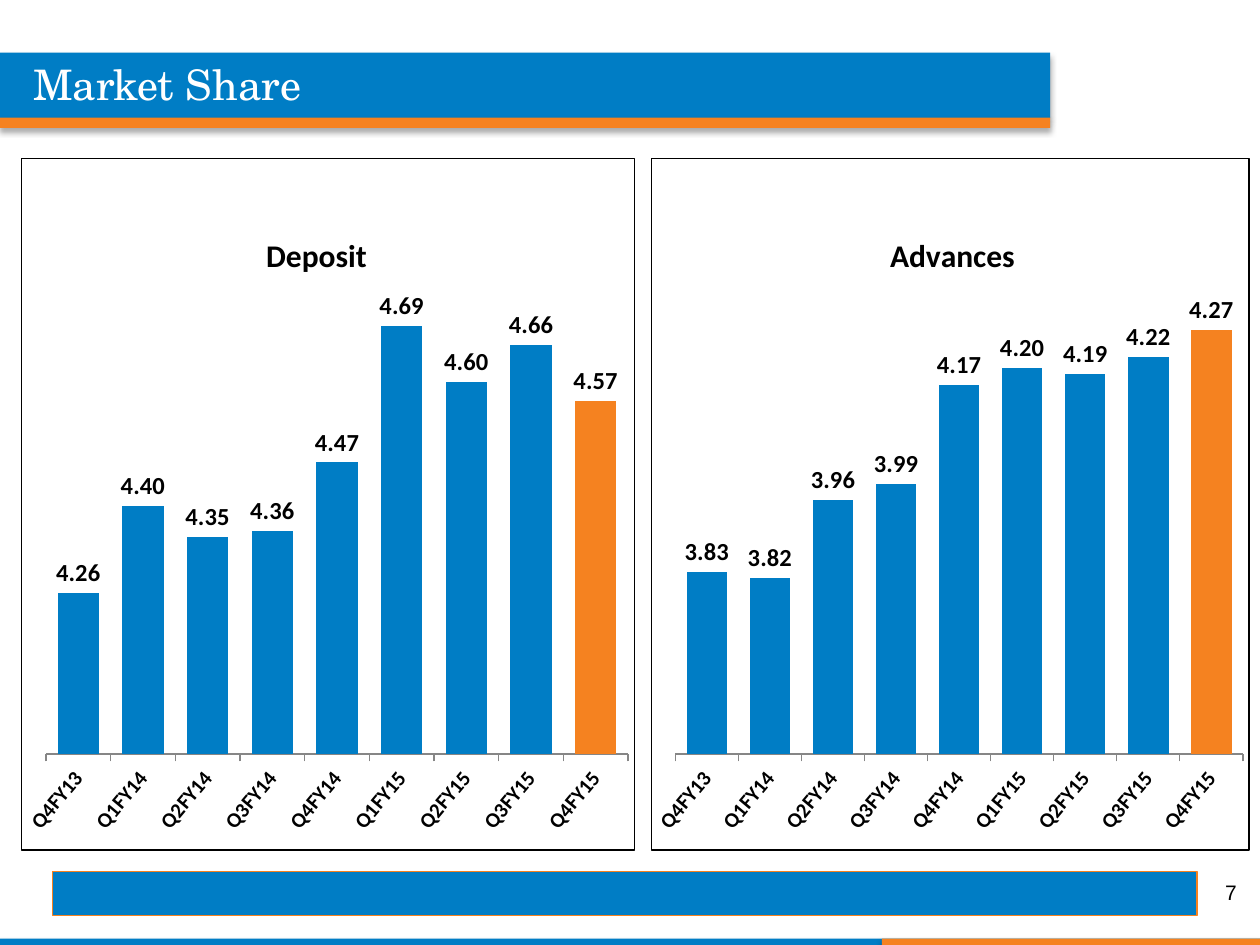
from dataclasses import dataclass

from lxml import etree
from pptx import Presentation
from pptx import oxml
from pptx import util as u
from pptx.chart import data as chart_data
from pptx.dml.color import RGBColor
from pptx.enum import chart as charts, shapes, text
from pptx.oxml.ns import nsdecls, qn


@dataclass(frozen=True)
class Theme:
    blue: RGBColor = RGBColor(0x00, 0x7D, 0xC5)
    orange: RGBColor = RGBColor(0xF5, 0x82, 0x20)
    black: RGBColor = RGBColor(0, 0, 0)
    white: RGBColor = RGBColor(255, 255, 255)
    axis_grey: RGBColor = RGBColor(0x86, 0x86, 0x86)
    title_font: str = "TeX Gyre Schola"
    number_font: str = "Arial"
    chart_font: str = "Calibri"
    title_size: int = 24
    number_size: int = 12
    chart_title_size: int = 18
    label_size: int = 14
    axis_size: int = 12


THEME = Theme()
QUARTERS = ["Q4FY13"] + [f"Q{q}FY{y}" for y in (14, 15) for q in range(1, 5)]
DEPOSIT = (4.26, 4.40, 4.35, 4.36, 4.47, 4.69, 4.60, 4.66, 4.57)
ADVANCES = (3.83, 3.82, 3.96, 3.99, 4.17, 4.20, 4.19, 4.22, 4.27)


def add_bar(page, left, top, width, height, color, outline=None, shadow=False):
    bar = page.shapes.add_shape(
        shapes.MSO_SHAPE.RECTANGLE, u.Cm(left), u.Cm(top), u.Cm(width), u.Cm(height))
    bar.fill.solid()
    bar.fill.fore_color.rgb = color
    bar.shadow.inherit = False
    if outline is None:
        bar.line.fill.background()
    else:
        bar.line.color.rgb = outline
        bar.line.width = u.Pt(0.75)
    if shadow:
        add_shadow(bar)


def add_shadow(bar):
    """Put a soft shadow below the bar."""
    effects = bar._element.spPr.find(qn("a:effectLst"))
    effects.append(oxml.parse_xml(
        f'<a:outerShdw {nsdecls("a")} blurRad="{u.Pt(3.5)}" dist="{u.Pt(2.2)}" '
        'dir="5400000" rotWithShape="0"><a:srgbClr val="000000">'
        '<a:alpha val="32000"/></a:srgbClr></a:outerShdw>'))


def add_text(page, words, left, top, width, height, *, font, size, color,
             align=text.PP_ALIGN.LEFT, anchor=text.MSO_ANCHOR.TOP):
    box = page.shapes.add_textbox(u.Cm(left), u.Cm(top), u.Cm(width), u.Cm(height))
    frame = box.text_frame
    frame.word_wrap = True
    frame.vertical_anchor = anchor
    para = frame.paragraphs[0]
    para.alignment = align
    span = para.add_run()
    span.text = words
    style_font(span.font, size, color=color, name=font)


def style_font(font, size, bold=None, color=THEME.black, name=THEME.chart_font):
    font.name = name
    font.size = u.Pt(size)
    font.bold = bold
    font.color.rgb = color


def set_layout(parent, index, inner=False, **fractions):
    """Give a chart part a manual position, as fractions of the chart."""
    for old in parent.findall(qn("c:layout")):
        parent.remove(old)
    layout = etree.Element(qn("c:layout"))
    manual = etree.SubElement(layout, qn("c:manualLayout"))
    settings = {"layoutTarget": "inner"} if inner else {}
    settings |= {"xMode": "edge", "yMode": "edge", **fractions}
    for name, value in settings.items():
        etree.SubElement(manual, qn(f"c:{name}")).set("val", str(value))
    parent.insert(index, layout)


def add_border(chart):
    chart._chartSpace.find(qn("c:chart")).addnext(oxml.parse_xml(
        f'<c:spPr {nsdecls("c", "a")}><a:noFill/><a:ln w="{u.Pt(0.75)}"><a:solidFill>'
        f'<a:srgbClr val="{THEME.black}"/></a:solidFill></a:ln></c:spPr>'))


def add_share_chart(page, title, series_name, values, low, high, left, width):
    """Add a column chart whose latest quarter stands out."""
    source = chart_data.CategoryChartData(number_format="0.00")
    source.categories = QUARTERS
    source.add_series(series_name, values)
    chart = page.shapes.add_chart(
        charts.XL_CHART_TYPE.COLUMN_CLUSTERED, u.Cm(left), u.Cm(3.18),
        u.Cm(width), u.Cm(13.97), source).chart
    style_font(chart.font, THEME.chart_title_size)
    chart.has_legend = False
    add_border(chart)
    add_chart_title(chart, title)
    style_axes(chart, low, high)
    style_columns(chart.plots[0])
    plot_area = chart._chartSpace.find(qn("c:chart")).find(qn("c:plotArea"))
    set_layout(plot_area, 0, inner=True, x=0.04, y=0.144, w=0.95, h=0.717)


def add_chart_title(chart, title):
    frame = chart.chart_title.text_frame
    frame.text = title
    style_font(frame.paragraphs[0].runs[0].font, THEME.chart_title_size, bold=True)
    chart.chart_title.include_in_layout = False
    set_layout(chart.chart_title._element, 1, x=0.39, y=0.1)


def style_axes(chart, low, high):
    value_axis = chart.value_axis
    value_axis.minimum_scale = low
    value_axis.maximum_scale = high
    value_axis.has_major_gridlines = False
    value_axis.tick_labels.number_format = "0.00"
    value_axis.tick_labels.number_format_is_linked = False
    value_axis.visible = False
    axis = chart.category_axis
    axis.major_tick_mark = charts.XL_TICK_MARK.OUTSIDE
    axis.format.line.color.rgb = THEME.axis_grey
    style_font(axis.tick_labels.font, THEME.axis_size, bold=True)
    body = axis._element.find(qn("c:txPr")).find(qn("a:bodyPr"))
    body.set("rot", str(-50 * 60000))
    body.set("vert", "horz")


def style_columns(plot):
    plot.gap_width = 56
    plot.vary_by_categories = False
    series = plot.series[0]
    latest = series.points[len(QUARTERS) - 1]
    for part, color in ((series, THEME.blue), (latest, THEME.orange)):
        part.format.fill.solid()
        part.format.fill.fore_color.rgb = color
    labels = series.data_labels
    labels.show_value = True
    labels.position = charts.XL_LABEL_POSITION.OUTSIDE_END
    labels.number_format = "0.00"
    labels.number_format_is_linked = False
    style_font(labels.font, THEME.label_size, bold=True)


def main():
    deck = Presentation()
    deck.slide_width, deck.slide_height = u.Cm(25.4), u.Cm(19.05)
    page = deck.slides.add_slide(deck.slide_layouts[6])

    add_bar(page, 0, 18.92, 25.4, 0.13, THEME.blue, shadow=True)
    add_bar(page, 17.78, 18.92, 7.62, 0.13, THEME.orange, shadow=True)
    add_bar(page, 0, 1.06, 21.17, 1.32, THEME.blue, shadow=True)
    add_bar(page, 0, 2.37, 21.17, 0.21, THEME.orange, shadow=True)
    add_bar(page, 1.06, 17.57, 23.07, 0.89, THEME.blue, outline=THEME.orange)

    add_text(page, "Market Share", 0.42, 1.06, 17.15, 1.28, font=THEME.title_font,
             size=THEME.title_size, color=THEME.white)
    add_text(page, "7", 19.26, 17.48, 5.92, 1.02, font=THEME.number_font,
             size=THEME.number_size, color=THEME.black,
             align=text.PP_ALIGN.RIGHT, anchor=text.MSO_ANCHOR.MIDDLE)

    add_share_chart(page, "Advances", "Advances", ADVANCES, 3.5, 4.4, 13.12, 12.07)
    add_share_chart(page, "Deposit", "Series 1", DEPOSIT, 4.0, 4.8, 0.42, 12.38)
    deck.save("out.pptx")


if __name__ == "__main__":
    main()
